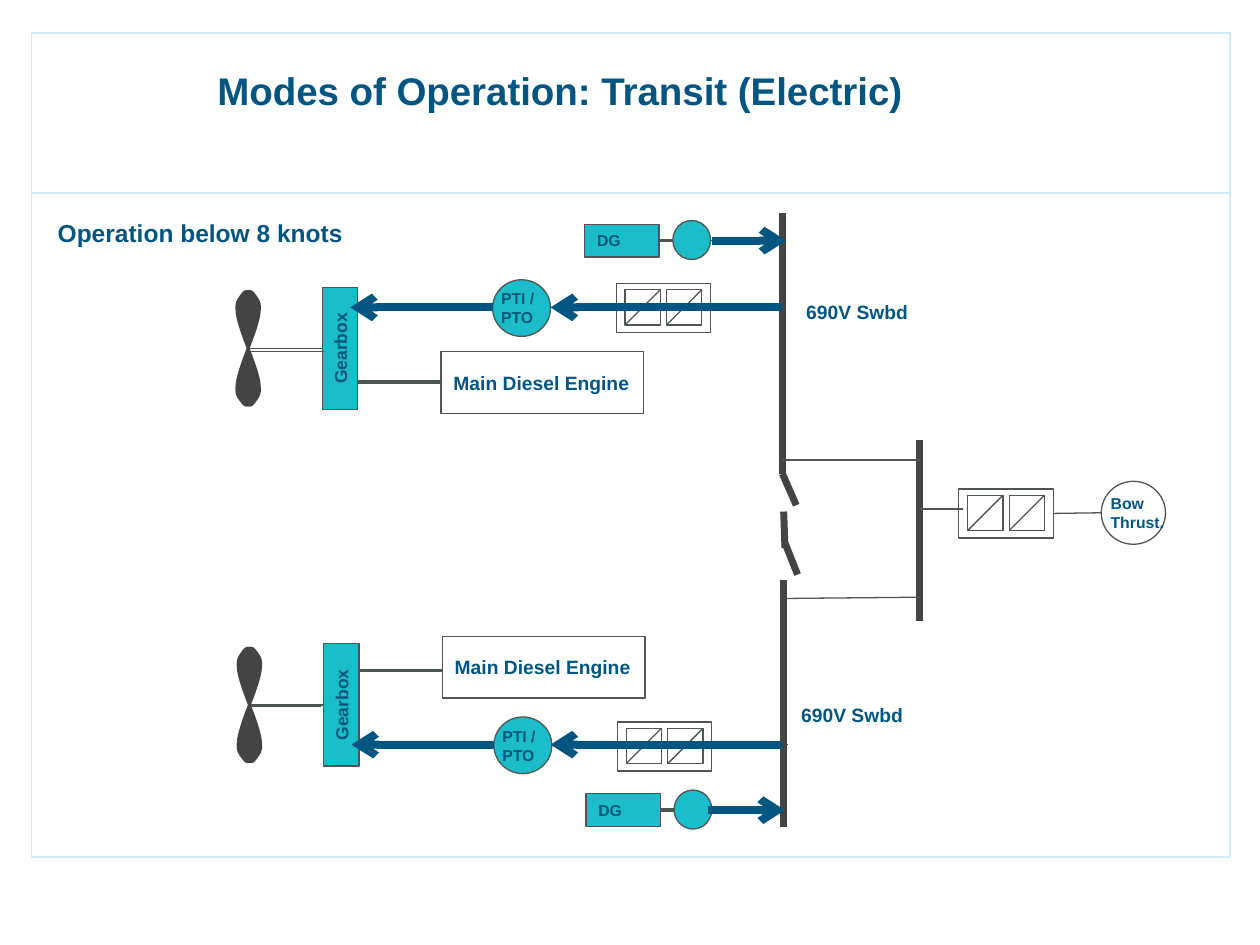
from dataclasses import dataclass
from typing import Optional

from lxml import etree
from pptx import Presentation
from pptx import util as u
from pptx.dml.color import RGBColor
from pptx.enum import shapes, text
from pptx.oxml import ns

NAVY = RGBColor(0x00, 0x55, 0x81)
TEAL = RGBColor(0x1A, 0xBD, 0xC9)
PALE = RGBColor(0xCB, 0xED, 0xF3)
DARK = RGBColor(0x44, 0x44, 0x44)
GREY = RGBColor(0x4F, 0x56, 0x50)
WHITE = RGBColor(0xFF, 0xFF, 0xFF)

RECTANGLE = shapes.MSO_SHAPE.RECTANGLE
OVAL = shapes.MSO_SHAPE.OVAL
BOX_INSETS = (0.1, 0.05, 0.1, 0.05)
CIRCLE_INSETS = (0, 0.05, 0.1, 0.05)
LEFT_SIDE, RIGHT_SIDE = 1, 3

# Half a propeller blade, measured from the hub: a start, then three points per curve
BLADE = [
    (0.02, -0.46),
    (-0.01, -0.46), (-0.03, -0.47), (-0.05, -0.44),
    (-0.07, -0.41), (-0.11, -0.38), (-0.1, -0.3),
    (-0.1, -0.22), (-0.02, -0.02), (0, 0.03),
    (0.01, 0.09), (0, 0.06), (0, 0.04),
]


@dataclass
class Train:
    """One propulsion train; lengths in inches."""
    shift: float
    gearbox_top: float
    engine_top: float
    engine_shaft_y: float
    motor_top: float
    converter_top: float
    generator_top: float
    second_shaft: tuple[float, float]
    supply_arrow: tuple[float, float]


@dataclass
class Label:
    wording: str
    box: tuple[float, float, float, float]
    size: float
    wrap: bool = False


TRAINS = [
    Train(0, 2.28, 2.79, 3.03, 2.22, 2.25, 1.78, (2.57, 2.79), (5.65, 6.24)),
    Train(0.01, 5.11, 5.05, 5.32, 5.69, 5.73, 6.3, (2.55, 5.61), (5.62, 6.23)),
]
LABELS = [
    Label("Operation below 8 knots", (0.36, 1.68, 9.13, 0.34), 14, True),
    Label("690V Swbd", (6.3, 2.33, 1.02, 0.29), 11),
    Label("690V Swbd", (6.26, 5.53, 1.02, 0.29), 11),
]
# Switchboard bars with open bus-tie breakers, then the bow thruster bar
BUS_BARS = [
    (6.21, 1.69, 6.21, 3.76),
    (6.21, 3.76, 6.32, 4.01),
    (6.22, 4.06, 6.23, 4.35),
    (6.23, 4.31, 6.33, 4.56),
    (6.22, 6.56, 6.22, 4.6),
    (7.3, 3.49, 7.3, 4.93),
]
FEEDERS = [
    (6.21, 3.65, 7.3, 3.65),
    (6.21, 4.75, 7.3, 4.74),
    (7.3, 4.04, 7.64, 4.04),
]

presentation = Presentation()
presentation.slide_width, presentation.slide_height = u.Inches(10), u.Inches(7.5)
slide = presentation.slides.add_slide(presentation.slide_layouts[6])


def write(shape, wording: str, size: float, insets=BOX_INSETS,
          align=text.PP_ALIGN.LEFT, wrap: bool = False) -> None:
    frame = shape.text_frame
    frame.text = wording
    frame.word_wrap = wrap
    (frame.margin_left, frame.margin_top,
     frame.margin_right, frame.margin_bottom) = map(u.Inches, insets)
    for paragraph in frame.paragraphs:
        paragraph.alignment = align
        for run in paragraph.runs:
            run.font.name, run.font.size, run.font.bold = "Arial", u.Pt(size), True
            run.font.color.rgb = NAVY


def add_block(kind, left: float, top: float, width: float, height: float,
              fill: Optional[RGBColor] = WHITE, line: RGBColor = GREY,
              weight: float = 0.75):
    shape = slide.shapes.add_shape(kind, *map(u.Inches, (left, top, width, height)))
    shape.shadow.inherit = False
    if fill is None:
        shape.fill.background()
    else:
        shape.fill.solid()
        shape.fill.fore_color.rgb = fill
    shape.line.color.rgb, shape.line.width = line, u.Pt(weight)
    shape.text_frame.vertical_anchor = text.MSO_ANCHOR.MIDDLE
    return shape


def add_line(x1: float, y1: float, x2: float, y2: float, color: RGBColor = GREY,
             weight: float = 0.75, arrow: bool = False):
    line = slide.shapes.add_connector(
        shapes.MSO_CONNECTOR.STRAIGHT, *map(u.Inches, (x1, y1, x2, y2)))
    line.line.color.rgb, line.line.width = color, u.Pt(weight)
    if arrow:
        etree.SubElement(line.line._get_or_add_ln(), ns.qn("a:tailEnd"), type="arrow")
    etree.SubElement(line._element.spPr, ns.qn("a:effectLst"))
    return line


def add_converter(left: float, top: float):
    for cell_left in (left + 0.07, left + 0.4):
        add_block(RECTANGLE, cell_left, top + 0.05, 0.28, 0.28)
        add_line(cell_left + 0.28, top + 0.05, cell_left, top + 0.33)
    return add_block(RECTANGLE, left, top, 0.75, 0.39, fill=None)


def add_propeller(hub_x: float, hub_y: float) -> None:
    for flip_x, flip_y in ((1, 1), (-1, 1), (1, -1), (-1, -1)):
        points = [(u.Inches(hub_x + flip_x * x), u.Inches(hub_y + flip_y * y))
                  for x, y in BLADE]
        builder = slide.shapes.build_freeform(*points[0])
        builder.add_line_segments(points[1:], close=False)
        blade = builder.convert_to_shape()
        # Turn every three line segments into one cubic curve
        segments = list(blade._element.iter(ns.qn("a:lnTo")))
        for first in range(0, len(segments), 3):
            curve = etree.Element(ns.qn("a:cubicBezTo"))
            segments[first].addprevious(curve)
            for segment in segments[first:first + 3]:
                curve.append(segment[0])
                segment.getparent().remove(segment)
        blade.shadow.inherit = False
        blade.fill.solid()
        blade.fill.fore_color.rgb = DARK
        blade.line.fill.background()


def add_train(train: Train) -> None:
    dx = train.shift
    drive_y = train.motor_top + 0.22
    supply_y = train.generator_top + 0.13
    hub_y = train.gearbox_top + 0.485

    # Shafts that run under the gearbox and the motor
    add_line(3.91 + dx, drive_y, 2.78 + dx, drive_y, weight=2)
    add_line(3.5 + dx, train.engine_shaft_y, 2.82 + dx, train.engine_shaft_y, weight=2)
    add_line(6.24 + dx, drive_y, 4.37 + dx, drive_y)

    # Gearbox, engine and propeller
    gearbox = add_block(RECTANGLE, 2.56 + dx, train.gearbox_top, 0.28, 0.97, TEAL)
    write(gearbox, "Gearbox", 10, align=text.PP_ALIGN.CENTER)
    gearbox.text_frame._txBody.bodyPr.set("vert", "vert270")
    engine = add_block(RECTANGLE, 3.5 + dx, train.engine_top, 1.61, 0.49)
    write(engine, "Main Diesel Engine", 11)
    shaft = add_line(2.56 + dx, hub_y, 1.98 + dx, hub_y)
    shaft.begin_connect(gearbox, LEFT_SIDE)
    shaft_x, shaft_y = train.second_shaft
    add_line(shaft_x, shaft_y, shaft_x - 0.58, shaft_y)
    add_propeller(1.97 + dx, hub_y)

    # Motor and converter
    motor = add_block(OVAL, 3.91 + dx, train.motor_top, 0.46, 0.45, TEAL)
    write(motor, "PTI /\nPTO", 9, CIRCLE_INSETS)
    add_converter(4.89 + dx, train.converter_top)

    # Diesel generator
    generator = add_block(RECTANGLE, 4.64 + dx, train.generator_top, 0.59, 0.26, TEAL)
    write(generator, "DG", 9)
    add_block(OVAL, 5.34 + dx, train.generator_top - 0.03, 0.3, 0.31, TEAL)
    coupling = add_line(5.34 + dx, supply_y, 5.23 + dx, supply_y, weight=2)
    coupling.end_connect(generator, RIGHT_SIDE)
    add_line(5.64 + dx, supply_y, 6.2 + dx, supply_y)


def add_power_flow(train: Train) -> None:
    drive_y = train.motor_top + 0.22
    supply_y = train.generator_top + 0.13
    motor_left = 3.91 + train.shift
    for start, end, y in (
        (*train.supply_arrow, supply_y),
        (6.21, 4.37, drive_y),
        (motor_left, motor_left - 1.13, drive_y),
    ):
        add_line(start, y, end, y, NAVY, 4.5, arrow=True)


# Frame and title
add_block(RECTANGLE, 0.25, 0.26, 9.51, 6.54, fill=None, line=PALE, weight=1)
add_line(0.25, 1.53, 9.76, 1.53, PALE, 1)
title = slide.shapes.add_textbox(*map(u.Inches, (1.69, 0.53, 5.51, 0.54)))
write(title, "Modes of Operation: Transit (Electric)", 22, (0, 0, 0, 0),
      text.PP_ALIGN.CENTER, wrap=True)

# Propulsion trains
for train in TRAINS:
    add_train(train)

# Switchboards
for bar in BUS_BARS:
    add_line(*bar, DARK, 4)
for feeder in FEEDERS:
    add_line(*feeder)

# Bow thruster
bow_converter = add_converter(7.61, 3.88)
thruster = add_block(OVAL, 8.74, 3.82, 0.51, 0.5)
write(thruster, "Bow\nThrust.", 9, CIRCLE_INSETS)
bow_line = add_line(8.36, 4.07, 8.74, 4.07)
bow_line.begin_connect(bow_converter, RIGHT_SIDE)

# Power flow and labels
for train in TRAINS:
    add_power_flow(train)
for label in LABELS:
    label_box = slide.shapes.add_textbox(*map(u.Inches, label.box))
    write(label_box, label.wording, label.size, wrap=label.wrap)
    label_box.text_frame.auto_size = text.MSO_AUTO_SIZE.SHAPE_TO_FIT_TEXT

presentation.save("out.pptx")
